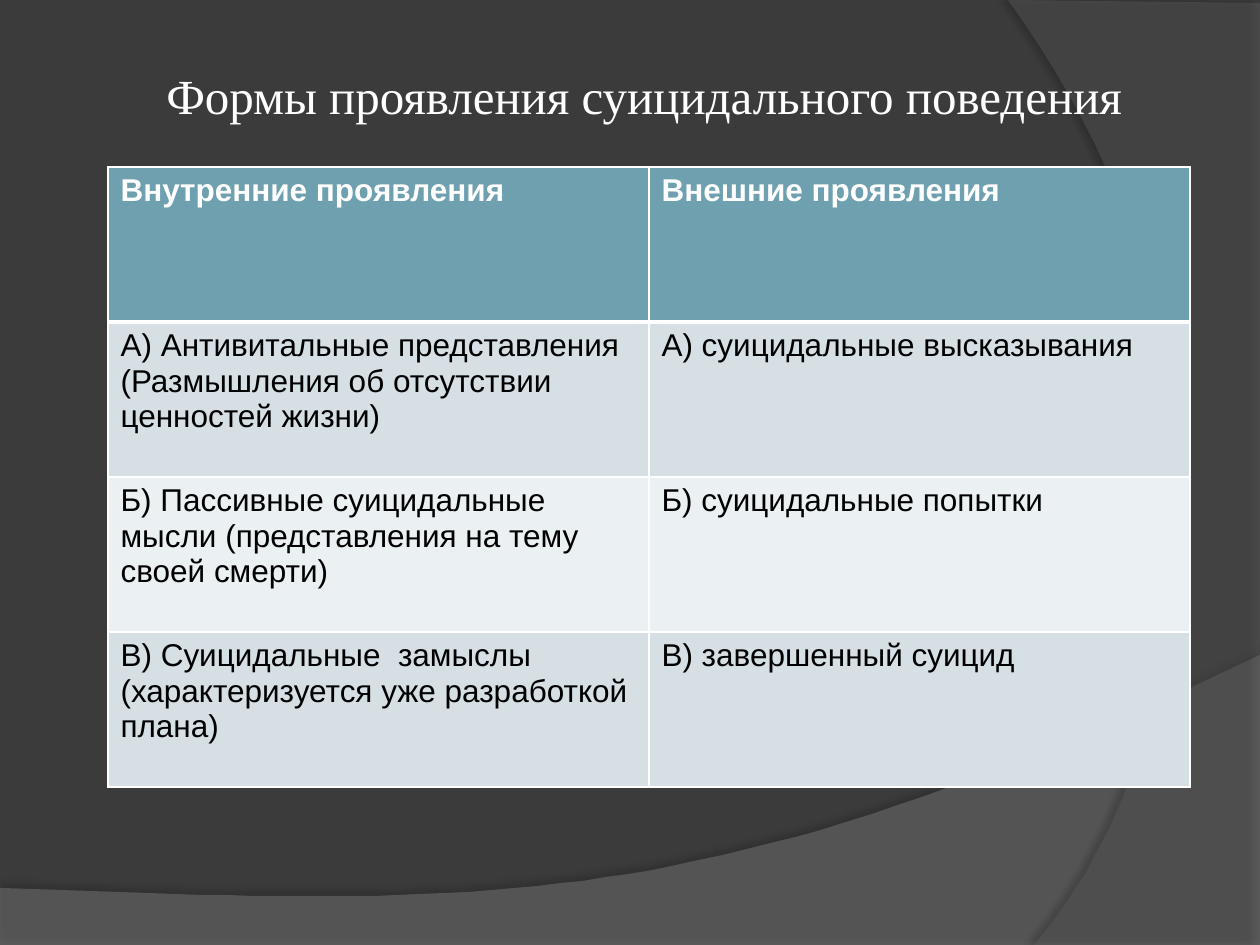
"""Builds a slide with a two-column table on the forms of suicidal behaviour."""
from lxml import etree
from pptx import Presentation
from pptx.dml.color import RGBColor
from pptx.enum.text import MSO_ANCHOR, PP_ALIGN
from pptx.oxml.ns import qn
from pptx.util import Pt

PX = 914400 / 126
CENTER, TOP = PP_ALIGN.CENTER, MSO_ANCHOR.TOP
COLORS = {
    "background": "3B3B3B", "wave": "7F7F7F", "swoosh": "5E5E5E", "shadow": "000000",
    "header": "6EA0B0", "odd": "D5DFE4", "even": "EBF0F2", "light": "FFFFFF", "dark": "000000",
}


def px(length):
    return round(length * PX)


def add_color(parent, name, alpha=100):
    color = etree.SubElement(parent, qn("a:srgbClr"), val=COLORS[name])
    etree.SubElement(color, qn("a:alpha"), val=str(alpha * 1000))


prs = Presentation()
prs.slide_width, prs.slide_height = px(1260), px(945)
slide = prs.slides.add_slide(prs.slide_layouts[5])
slide.background.fill.solid()
slide.background.fill.fore_color.rgb = RGBColor.from_string(COLORS["background"])

ribbons = [
    ("wave", [(0, 888), (0, 946), (1260, 946)],
     [(1260, 655), (704, 919), (493, 906), (0, 888)], 45, 35, 3.5, 270),
    ("swoosh", [(1260, 3), (1260, 945)],
     [(1034, 945), (1178, 780), (1283, 378), (1008, 0)], 40, 45, 4, 180),
]
STEPS = 48
for name, corners, curve, opacity, shadow_opacity, distance, direction in ribbons:
    points = list(corners)
    for step in range(STEPS + 1):
        t = step / STEPS
        weights = ((1 - t) ** 3, 3 * t * (1 - t) ** 2, 3 * t * t * (1 - t), t ** 3)
        points.append(tuple(sum(w * p[axis] for w, p in zip(weights, curve)) for axis in (0, 1)))
    outline = slide.shapes.build_freeform(*points[0], scale=PX)
    outline.add_line_segments(points[1:], close=True)
    ribbon = outline.convert_to_shape()
    ribbon.line.fill.background()
    ribbon.fill.solid()
    ribbon.fill.fore_color.rgb = RGBColor.from_string(COLORS[name])
    ribbon.shadow.inherit = False
    properties = ribbon._element.spPr
    tint = properties.find(qn("a:solidFill")).find(qn("a:srgbClr"))
    etree.SubElement(tint, qn("a:alpha"), val=str(opacity * 1000))
    shadow = etree.SubElement(
        properties.find(qn("a:effectLst")), qn("a:outerShdw"), blurRad=str(Pt(4)),
        dist=str(Pt(distance)), dir=str(direction * 60000), algn="ctr", rotWithShape="0")
    add_color(shadow, "shadow", shadow_opacity)

title = slide.shapes.title
slide.shapes._spTree.append(title._element)
title.left, title.top, title.width, title.height = px(147), px(59), px(994), px(72)
title.text_frame.text = "Формы проявления суицидального поведения"
title.text_frame.vertical_anchor = TOP
heading = title.text_frame.paragraphs[0]
heading.alignment = CENTER
heading.font.name, heading.font.size = "Times New Roman", Pt(28)
heading.font.color.rgb = RGBColor.from_string(COLORS["light"])

manifestations = [
    ("Внутренние проявления", "Внешние проявления"),
    ("А) Антивитальные представления\n(Размышления об отсутствии ценностей жизни)",
     "А) суицидальные высказывания"),
    ("Б) Пассивные суицидальные мысли (представления на тему своей смерти)",
     "Б) суицидальные попытки"),
    ("В) Суицидальные  замыслы (характеризуется уже разработкой плана)",
     "В) завершенный суицид"),
]
table = slide.shapes.add_table(len(manifestations), 2, px(108), px(167), px(1082), px(620)).table
for row, texts in enumerate(manifestations):
    is_header = row == 0
    fill_name = "header" if is_header else "odd" if row % 2 else "even"
    widths = {"L": 1, "R": 1, "T": 3 if row == 1 else 1, "B": 3 if is_header else 1}
    for column, text in enumerate(texts):
        cell = table.cell(row, column)
        cell.text = text
        for paragraph in cell.text_frame.paragraphs:
            paragraph.font.name, paragraph.font.size = "Arial", Pt(18)
            paragraph.font.bold = is_header
            paragraph.font.color.rgb = RGBColor.from_string(
                COLORS["light" if is_header else "dark"])
        cell_properties = cell._tc.get_or_add_tcPr()
        for side, width in widths.items():
            border = etree.SubElement(cell_properties, qn(f"a:ln{side}"), w=str(Pt(width)))
            add_color(etree.SubElement(border, qn("a:solidFill")), "light")
        cell.fill.solid()
        cell.fill.fore_color.rgb = RGBColor.from_string(COLORS[fill_name])

prs.save("out.pptx")
